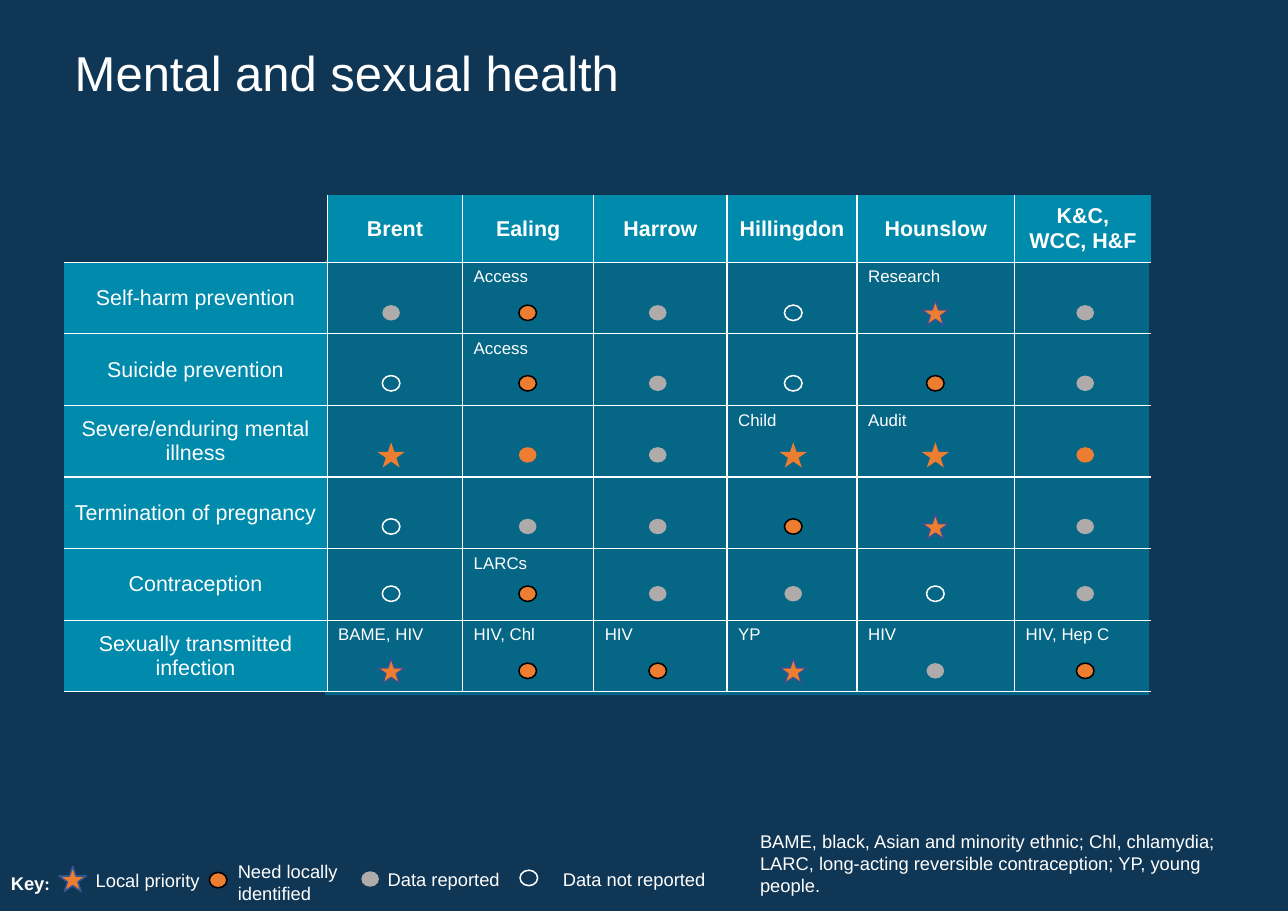
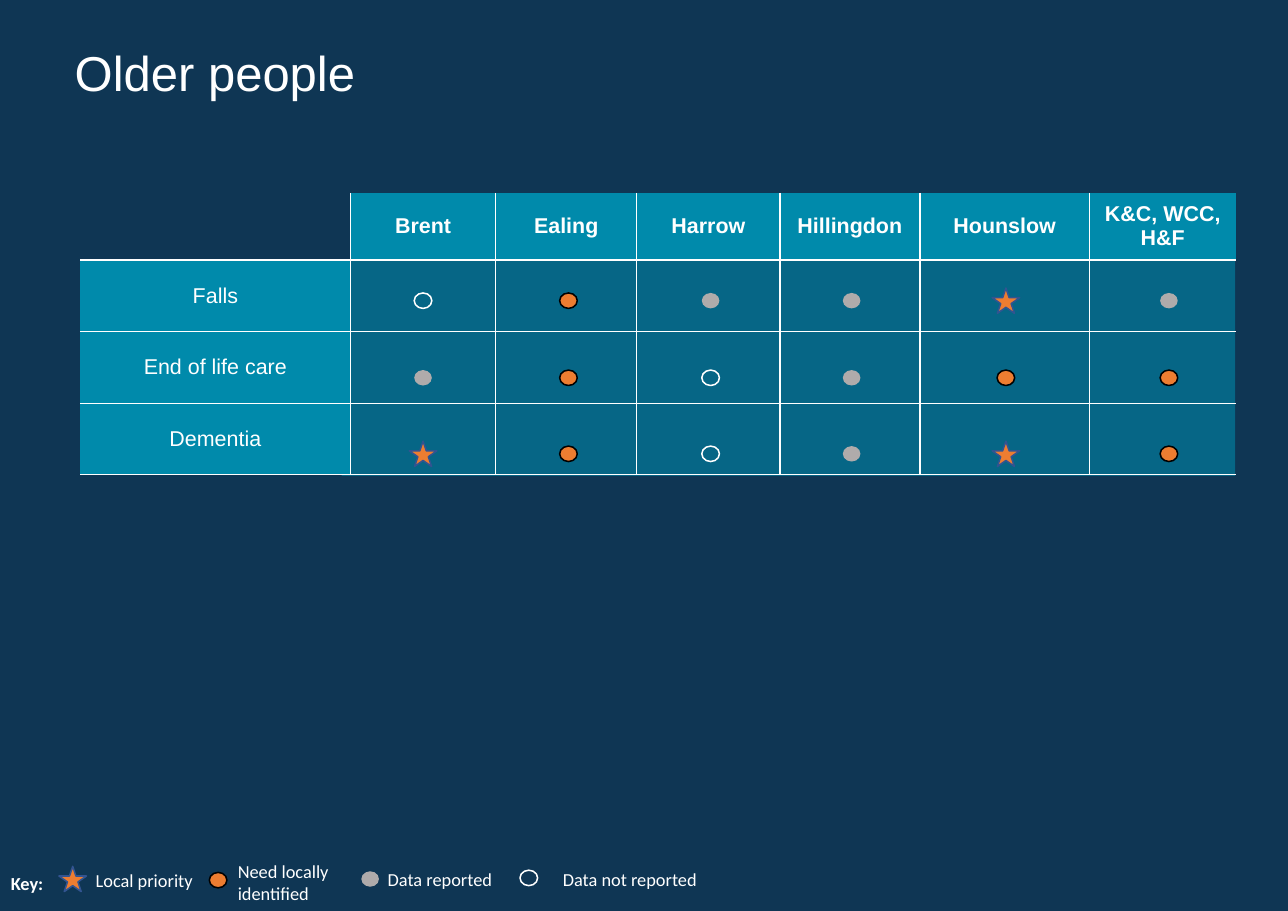
import lxml.etree
import pptx
import pptx.dml.color
import pptx.enum.shapes
import pptx.enum.text
import pptx.oxml.ns
import pptx.util

Inches = pptx.util.Inches
Pt = pptx.util.Pt
SHAPE = pptx.enum.shapes.MSO_SHAPE
ALIGN = pptx.enum.text.PP_ALIGN
ANCHOR = pptx.enum.text.MSO_ANCHOR
qn = pptx.oxml.ns.qn

NAVY, TEAL, WHITE, BLACK = "0F3654", "008AAB", "FFFFFF", "000000"
ORANGE, GREY, STAR_EDGE = "ED7D31", "AFABAB", "325491"
PANEL_OPACITY = 58000
BOROUGHS = ["Brent", "Ealing", "Harrow", "Hillingdon", "Hounslow", "K&C, WCC, H&F"]
HEADER_HEIGHT, ROW_HEIGHT = 0.61, 0.65

STAR = (SHAPE.STAR_5_POINT, 0.25, 0.23)
DOT = (SHAPE.FLOWCHART_CONNECTOR, 0.16, 0.14)
# Code: shape and size, fill, outline. Lower case is the form without an outline.
MARKS = {
    "S": (STAR, ORANGE, STAR_EDGE),
    "s": (STAR, ORANGE, None),
    "N": (DOT, ORANGE, BLACK),
    "n": (DOT, ORANGE, None),
    "R": (DOT, GREY, None),
    "O": (DOT, None, WHITE),
}
# Mark, its centre, label, and the label's left, top, width and height.
KEY = [
    ("S", (0.66, 7.98), "Local priority", (0.77, 7.84, 1.16, 0.3)),
    ("N", (1.98, 7.99), "Need locally identified", (2.06, 7.76, 1.16, 0.5)),
    ("R", (3.36, 7.98), "Data reported", (3.42, 7.83, 1.92, 0.3)),
    ("O", (4.8, 7.97), "Data not reported", (5.01, 7.83, 1.92, 0.3)),
]


def color(value):
    return pptx.dml.color.RGBColor.from_string(value)


def paint(fill, value):
    if value is None:
        fill.background()
    else:
        fill.solid()
        fill.fore_color.rgb = color(value)


def add_span(para, text, size, font="Arial", bold=False):
    span = para.add_run()
    span.text = text
    span.font.name = font
    span.font.size = Pt(size)
    span.font.bold = bold
    span.font.color.rgb = color(WHITE)


def add_text(page, place, text, size, font="Arial", bold=False):
    """Add a wrapped text box and return its paragraph."""
    box = page.shapes.add_textbox(*map(Inches, place))
    box.text_frame.word_wrap = True
    para = box.text_frame.paragraphs[0]
    add_span(para, text, size, font, bold)
    return para


def add_shape(page, kind, place, fill, edge=None):
    shape = page.shapes.add_shape(kind, *map(Inches, place))
    shape.shadow.inherit = False
    paint(shape.fill, fill)
    paint(shape.line.fill, edge)
    if edge:
        shape.line.width = Pt(1)
    return shape


def add_mark(page, code, center):
    (kind, width, height), fill, edge = MARKS[code]
    x, y = center
    add_shape(page, kind, (x - width / 2, y - height / 2, width, height), fill, edge)


def add_panel(page, place):
    """Add the translucent ground behind the body of the table."""
    panel = add_shape(page, SHAPE.RECTANGLE, place, TEAL)
    tint = panel.fill._xPr.find(".//" + qn("a:srgbClr"))
    lxml.etree.SubElement(tint, qn("a:alpha"), val=str(PANEL_OPACITY))


def set_borders(cell, visible):
    """Draw white lines on the visible sides and clear the others."""
    properties = cell._tc.get_or_add_tcPr()
    for side in "LRTB":
        line = lxml.etree.SubElement(properties, qn("a:ln" + side), w=str(Pt(1)))
        if side in visible:
            solid = lxml.etree.SubElement(line, qn("a:solidFill"))
            lxml.etree.SubElement(solid, qn("a:srgbClr"), val=WHITE)
        else:
            lxml.etree.SubElement(line, qn("a:noFill"))


def add_matrix(page, left, top, widths, rows):
    """Add the borough table; each row is a label, mark codes and notes by borough."""
    height = HEADER_HEIGHT + ROW_HEIGHT * len(rows)
    frame = page.shapes.add_table(len(rows) + 1, len(widths), Inches(left),
                                  Inches(top), Inches(sum(widths)), Inches(height))
    table = frame.table
    table.horz_banding = False
    for column, width in zip(table.columns, widths):
        column.width = Inches(width)
    for r, line in enumerate(table.rows):
        line.height = Inches(ROW_HEIGHT if r else HEADER_HEIGHT)

    texts = [[""] + BOROUGHS]
    texts += [[label] + [notes.get(name, "") for name in BOROUGHS]
              for label, _, notes in rows]
    for r, line in enumerate(texts):
        for c, text in enumerate(line):
            cell = table.cell(r, c)
            visible = "B" + ("T" if r else "") + ("L" if c else "")
            set_borders(cell, visible + ("R" if c < len(widths) - 1 else ""))
            heading = (r == 0) != (c == 0)
            paint(cell.fill, TEAL if heading else None)
            para = cell.text_frame.paragraphs[0]
            if heading:
                cell.vertical_anchor = ANCHOR.MIDDLE
                para.alignment = ALIGN.CENTER
            if text:
                add_span(para, text, 14 if heading else 11, bold=r == 0)


def add_marks(page, rows, centers_x, centers_y):
    for (_, codes, _), y in zip(rows, centers_y):
        for code, x in zip(codes, centers_x):
            add_mark(page, code, (x, y))


def add_key(page, font):
    para = add_text(page, (0, 7.87, 1.56, 0.3), "Key", 12, font, bold=True)
    add_span(para, ":", 12, "Calibri", bold=True)
    for code, center, label, place in KEY:
        add_mark(page, code, center)
        add_text(page, place, label, 12, font)


def add_page(deck, title, panel, key_font):
    page = deck.slides.add_slide(deck.slide_layouts[6])
    add_panel(page, panel)
    add_text(page, (0.58, 0.4, 7.82, 1.6), title, 32).line_spacing = 0.9
    add_key(page, key_font)
    return page


def add_mental_and_sexual_health(deck):
    rows = [
        ("Self-harm prevention", "RNROSR", {"Ealing": "Access", "Hounslow": "Research"}),
        ("Suicide prevention", "ONRONR", {"Ealing": "Access"}),
        ("Severe/enduring mental illness", "snRssn",
         {"Hillingdon": "Child", "Hounslow": "Audit"}),
        ("Termination of pregnancy", "ORRNSR", {}),
        ("Contraception", "ONRROR", {"Ealing": "LARCs"}),
        ("Sexually transmitted infection", "SNNSRN",
         dict(zip(BOROUGHS, ["BAME, HIV", "HIV, Chl", "HIV", "YP", "HIV", "HIV, Hep C"]))),
    ]
    page = add_page(deck, "Mental and sexual health", (2.95, 2.36, 7.48, 3.95), "Arial")
    add_matrix(page, 0.58, 1.77, [2.39, 1.23, 1.19, 1.21, 1.18, 1.43, 1.24], rows)
    add_marks(page, rows, [3.55, 4.79, 5.97, 7.2, 8.49, 9.85],
              [2.84, 3.48, 4.13, 4.78, 5.39, 6.09])
    add_text(page, (6.8, 7.49, 4.43, 0.71),
             "BAME, black, Asian and minority ethnic; Chl, chlamydia; LARC, long-acting "
             "reversible contraception; YP, young people.", 12)


def add_older_people(deck):
    rows = [
        ("Falls", "ONRRSR", {}),
        ("End of life care", "RNORNN", {}),
        ("Dementia", "SNORSN", {}),
    ]
    page = add_page(deck, "Older people", (3.1, 2.36, 8.11, 1.96), "Calibri")
    add_matrix(page, 0.73, 1.75, [2.45, 1.32, 1.28, 1.3, 1.27, 1.54, 1.33], rows)
    add_marks(page, rows, [3.84, 5.16, 6.45, 7.73, 9.13, 10.61], [2.73, 3.43, 4.12])


def main():
    deck = pptx.Presentation()
    deck.slide_width, deck.slide_height = Inches(11.69), Inches(8.27)
    paint(deck.slide_master.background.fill, NAVY)
    add_mental_and_sexual_health(deck)
    add_older_people(deck)
    deck.save("out.pptx")


if __name__ == "__main__":
    main()
